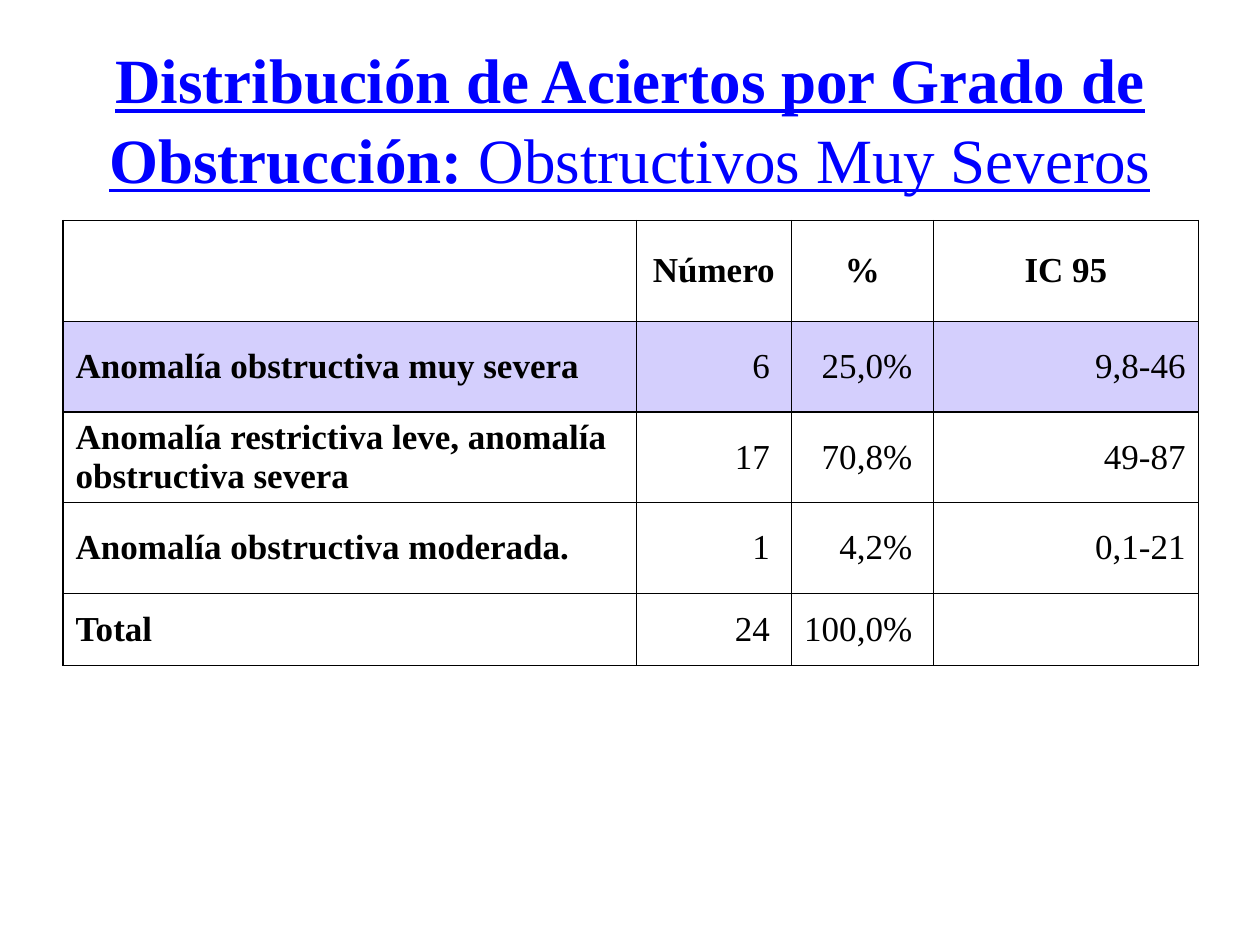
from dataclasses import dataclass

from lxml.etree import SubElement
from pptx import Presentation
from pptx.dml.color import RGBColor
from pptx.enum.text import MSO_ANCHOR, PP_ALIGN
from pptx.oxml.ns import qn
from pptx.util import Inches, Pt


@dataclass(frozen=True)
class Theme:
    font: str = "Times New Roman"
    head: str = "0000FF"
    ink: str = "000000"
    paper: str = "FFFFFF"
    mark: str = "D4CFFD"
    big: int = 36
    body: int = 20
    rule: float = 0.75


@dataclass(frozen=True)
class Row:
    high: float
    texts: tuple[str, str, str, str]
    top: bool = False
    mark: bool = False


THEME = Theme()
LEFT, WIDE = 0.5, 9
COLS = (4.55, 1.23, 1.13, 2.1)
ROWS = (
    Row(0.8, ("", "Número ", "%", "IC 95"), top=True),
    Row(0.72, ("Anomalía obstructiva muy severa", "6 ", "25,0% ", "9,8-46"), mark=True),
    Row(0.72, ("Anomalía restrictiva leve, anomalía obstructiva severa",
               "17 ", "70,8% ", "49-87")),
    Row(0.72, ("Anomalía obstructiva moderada.", "1 ", "4,2% ", "0,1-21")),
    Row(0.57, ("Total", "24 ", "100,0% ", "")),
)


def add_run(para, text: str, size: int, color: str, bold: bool, line: bool = False) -> None:
    run = para.add_run()
    run.text = text
    font = run.font
    font.name, font.size, font.bold, font.underline = THEME.font, Pt(size), bold, line
    font.color.rgb = RGBColor.from_string(color)


def draw_title(slide) -> None:
    title = slide.shapes.title
    title.left, title.top = Inches(LEFT), Inches(0.3)
    title.width, title.height = Inches(WIDE), Inches(1.25)
    frame = title.text_frame
    frame.word_wrap = True
    frame.vertical_anchor = MSO_ANCHOR.MIDDLE
    para = frame.paragraphs[0]
    para.alignment = PP_ALIGN.CENTER
    para.line_spacing = 1.05
    add_run(para, "Distribución de Aciertos por Grado de Obstrucción:",
            THEME.big, THEME.head, True, True)
    add_run(para, " Obstructivos Muy Severos", THEME.big, THEME.head, False, True)


def add_rules(cell) -> None:
    props = cell._tc.get_or_add_tcPr()
    for at, side in enumerate(("lnL", "lnR", "lnT", "lnB")):
        line = props.makeelement(qn(f"a:{side}"), {"w": str(int(Pt(THEME.rule)))})
        props.insert(at, line)
        fill = SubElement(line, qn("a:solidFill"))
        SubElement(fill, qn("a:srgbClr"), val=THEME.ink)


def draw_cell(cell, text: str, row: Row, col: int) -> None:
    cell.vertical_anchor = MSO_ANCHOR.MIDDLE
    cell.fill.solid()
    cell.fill.fore_color.rgb = RGBColor.from_string(THEME.mark if row.mark else THEME.paper)
    add_rules(cell)
    if not text:
        return
    para = cell.text_frame.paragraphs[0]
    if row.top:
        para.alignment = PP_ALIGN.CENTER
    else:
        para.alignment = PP_ALIGN.RIGHT if col else PP_ALIGN.LEFT
    add_run(para, text, THEME.body, THEME.ink, row.top or col == 0)


def draw_table(slide) -> None:
    table = slide.shapes.add_table(
        len(ROWS), len(COLS), Inches(LEFT), Inches(1.75),
        Inches(sum(COLS)), Inches(sum(row.high for row in ROWS))).table
    table.first_row = table.horz_banding = False
    for col, wide in zip(table.columns, COLS):
        col.width = Inches(wide)
    for y, row in enumerate(ROWS):
        table.rows[y].height = Inches(row.high)
        for x, text in enumerate(row.texts):
            draw_cell(table.cell(y, x), text, row, x)


def main() -> None:
    deck = Presentation()
    deck.slide_width, deck.slide_height = Inches(10), Inches(7.5)
    slide = deck.slides.add_slide(deck.slide_layouts.get_by_name("Title Only"))
    draw_title(slide)
    draw_table(slide)
    deck.save("out.pptx")


if __name__ == "__main__":
    main()
